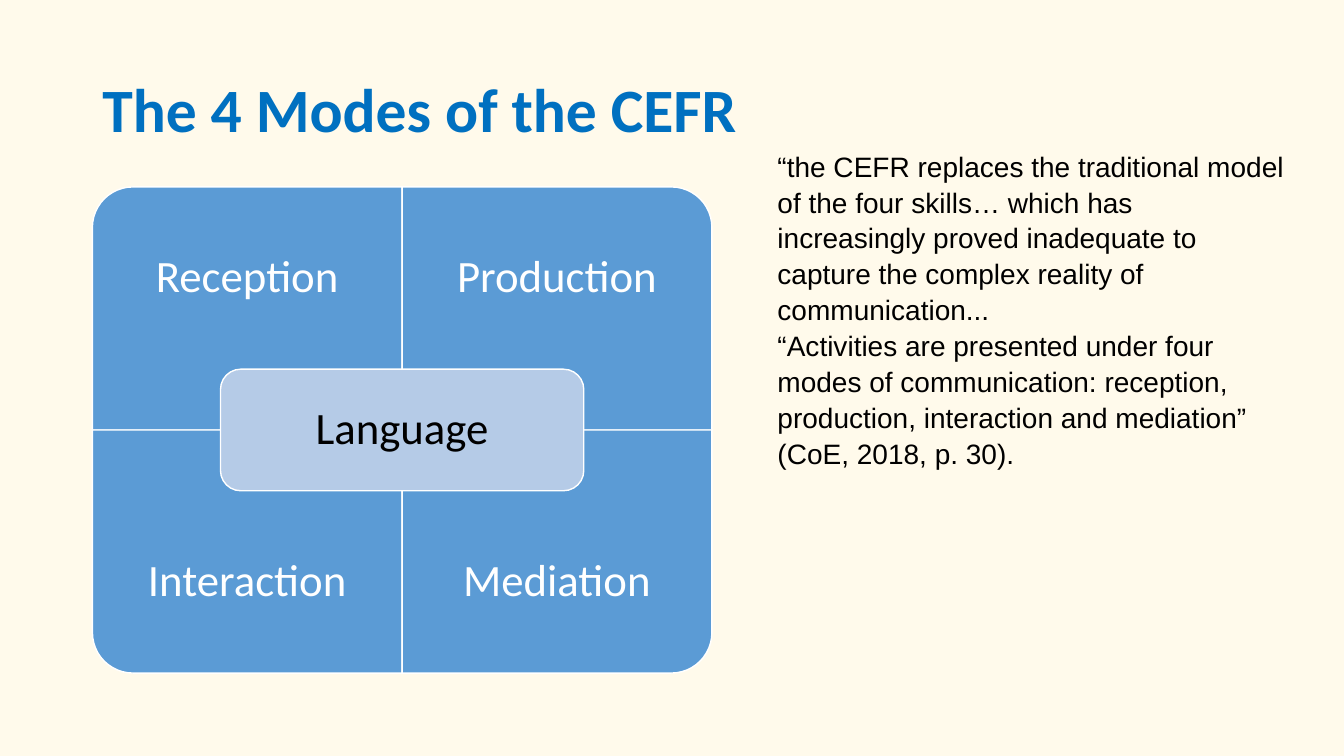
from pptx import Presentation
from pptx.dml.color import RGBColor
from pptx.enum.shapes import MSO_SHAPE as Shape
from pptx.enum.text import MSO_ANCHOR as Anchor, PP_ALIGN as Align
from pptx.util import Pt

EMU_PER_PX = 9525
QUADRANTS = [
    ("Reception", 0, 0, 270),
    ("Production", 1, 0, 0),
    ("Interaction", 0, 1, 180),
    ("Mediation", 1, 1, 90),
]
QUOTE = (
    "“the CEFR replaces the traditional model of the four skills… which has "
    "increasingly proved inadequate to capture the complex reality of communication...\v"
    "“Activities are presented under four modes of communication: reception, "
    "production, interaction and mediation” (CoE, 2018, p. 30)."
)
TITLE_FONT = {"name": "Calibri", "size": Pt(44), "bold": True}
LABEL_FONT = {"name": "Calibri", "size": Pt(32)}
QUOTE_FONT = {"name": "Arial", "size": Pt(20)}


def px(*lengths):
    """Turn pixel lengths into EMU."""
    return [round(length * EMU_PER_PX) for length in lengths]


def color(hex_code):
    """Turn a hex string into a colour."""
    return RGBColor.from_string(hex_code)


def set_values(target, values):
    """Set each attribute in a dict of format values."""
    for name, value in values.items():
        setattr(target, name, value)


def write(shape, text, font, font_color, anchor=Anchor.MIDDLE, **layout):
    """Write one formatted paragraph into a shape and return it."""
    set_values(shape.text_frame, {"word_wrap": True, "vertical_anchor": anchor})
    paragraph = shape.text_frame.paragraphs[0]
    paragraph.text = text
    set_values(paragraph, {"line_spacing": 0.9, **layout})
    for run in paragraph.runs:
        set_values(run.font, font)
        run.font.color.rgb = color(font_color)
    return paragraph


def add_panel(slide, kind, box, fill):
    """Add a filled shape with a thin white outline."""
    shape = slide.shapes.add_shape(kind, *px(*box))
    shape.shadow.inherit = False
    shape.fill.solid()
    shape.fill.fore_color.rgb = color(fill)
    shape.line.color.rgb = color("FFFFFF")
    shape.line.width = Pt(1)
    return shape


def add_title(slide, box):
    """Add the slide title."""
    title = slide.shapes.add_textbox(*px(*box))
    write(title, "The 4 Modes of the CEFR", TITLE_FONT, "0070C0")


def add_quadrant(slide, box, label, row, rotation):
    """Add one quadrant with its outer corner rounded, and its label."""
    left, top, width, height = box
    if rotation % 180:
        shift = (width - height) / 2
        panel_box = (left + shift, top - shift, height, width)
    else:
        panel_box = box
    panel = add_panel(slide, Shape.ROUND_1_RECTANGLE, panel_box, "5B9BD5")
    panel.rotation = rotation
    label_height = height * 3 / 4
    label_top = top + row * (height - label_height)
    text_box = slide.shapes.add_textbox(*px(left, label_top, width, label_height))
    write(text_box, label, LABEL_FONT, "FFFFFF", alignment=Align.CENTER)


def add_modes_diagram(slide, box):
    """Add the four modes around the central language panel."""
    left, top, width, height = box
    cell_width, cell_height = width / 2, height / 2
    for label, column, row, rotation in QUADRANTS:
        cell = (left + column * cell_width, top + row * cell_height, cell_width, cell_height)
        add_quadrant(slide, cell, label, row, rotation)
    core_width, core_height = 346, height / 4
    core_box = (left + (width - core_width) / 2, top + (height - core_height) / 2,
                core_width, core_height)
    core = add_panel(slide, Shape.ROUNDED_RECTANGLE, core_box, "B5CBE7")
    write(core, "Language", LABEL_FONT, "000000", alignment=Align.CENTER)


def add_quote(slide, box):
    """Add the indented quotation."""
    text_box = slide.shapes.add_textbox(*px(*box))
    paragraph = write(text_box, QUOTE, QUOTE_FONT, "000000", Anchor.TOP,
                      line_spacing=1.07, space_after=Pt(4.5))
    properties = paragraph._p.get_or_add_pPr()
    properties.set("marL", str(px(27)[0]))
    properties.set("indent", "0")


def main():
    """Build and save the slide."""
    presentation = Presentation()
    presentation.slide_width, presentation.slide_height = px(1280, 720)
    slide = presentation.slides.add_slide(presentation.slide_layouts[6])
    slide.background.fill.solid()
    slide.background.fill.fore_color.rgb = color("FFFAEB")
    add_title(slide, (88, 38, 1104, 139))
    add_modes_diagram(slide, (88, 178, 590, 463))
    add_quote(slide, (704, 135, 531, 321))
    presentation.save("out.pptx")


if __name__ == "__main__":
    main()
